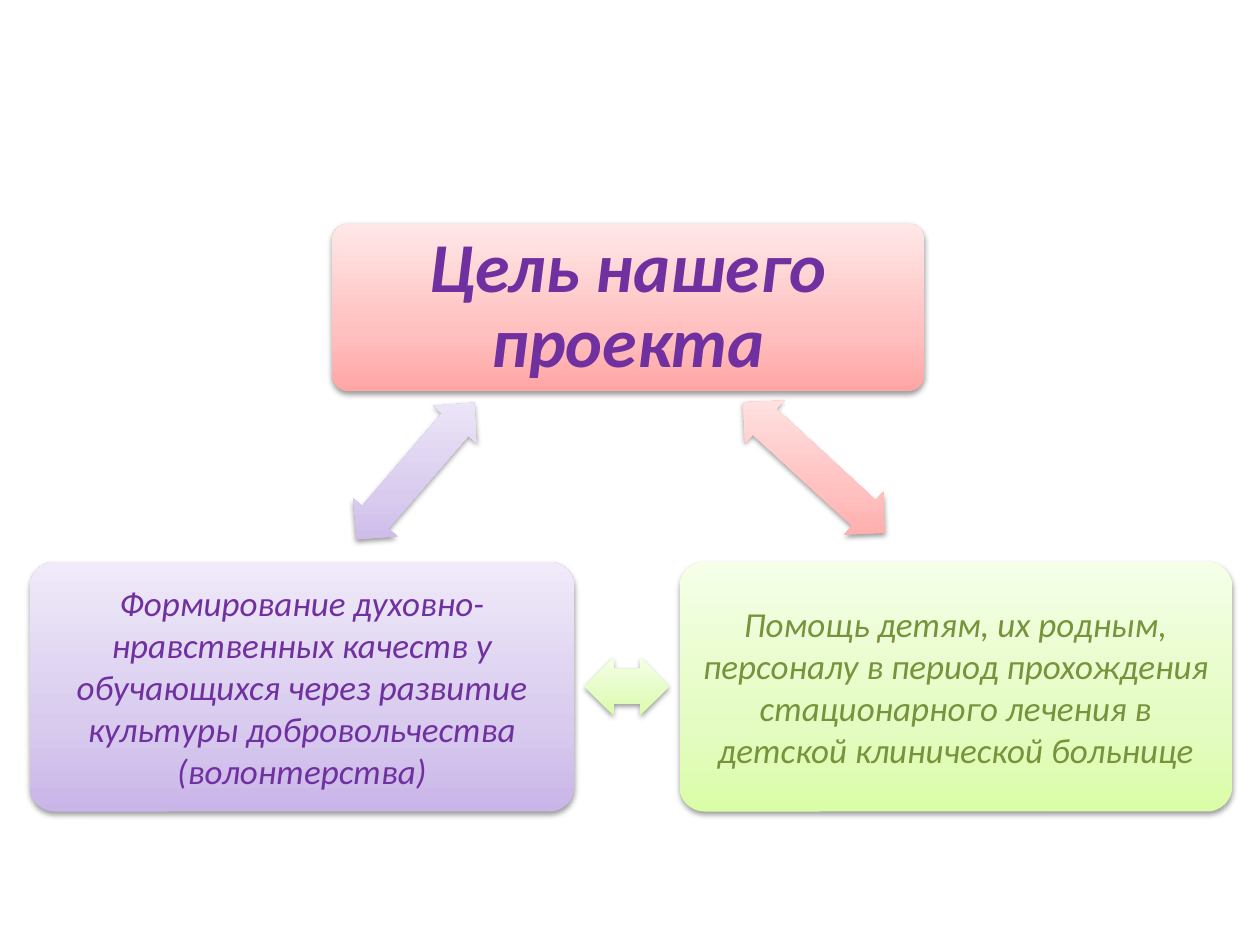
"""Build a slide that links the project goal to its two parts."""
from dataclasses import dataclass

from lxml import etree
from pptx import Presentation
from pptx.dml.color import RGBColor
from pptx.enum.shapes import MSO_SHAPE as Preset
from pptx.enum.text import MSO_ANCHOR as Anchor, MSO_AUTO_SIZE as AutoSize, PP_ALIGN as Align
from pptx.oxml import parse_xml
from pptx.oxml.ns import nsdecls, qn
from pptx.shapes.base import BaseShape
from pptx.slide import Slide
from pptx.util import Pt

RED = ("FFA6A5", "FFC0BF", "FFE7E7")
GREEN = ("DAFDA7", "E4FCC2", "F5FFE7")
PURPLE = ("C9B5E8", "D8CBEE", "F0EAF9")
STOPS = (0, 35, 100)


@dataclass(frozen=True)
class Panel:
    left: float
    top: float
    width: float
    height: float
    shades: tuple[str, str, str]
    text: str
    color: str


@dataclass(frozen=True)
class Arrow:
    left: float
    top: float
    width: float
    rotation: float
    shades: tuple[str, str, str]


GOAL = Panel(189.7, 127.8, 338.6, 95.8, RED, "Цель нашего проекта", "7030A0")
PARTS = (
    Panel(388.4, 321.1, 315.6, 142.6, GREEN,
          "Помощь детям, их родным, персоналу в период прохождения "
          "стационарного лечения в детской клинической больнице", "77933C"),
    Panel(17, 321.1, 311.2, 142.6, PURPLE,
          "Формирование духовно-нравственных качеств у обучающихся через "
          "развитие культуры добровольчества (волонтерства)", "7030A0"),
)
ARROWS = (
    Arrow(410.2, 250.6, 110.2, 42.6, RED),
    Arrow(334.1, 375.6, 48.2, 180, GREEN),
    Arrow(185.8, 252.6, 103, 310.7, PURPLE),
)
ARROW_HEIGHT = 33.1


def rgb(value: str) -> RGBColor:
    """Turn a hex string into a colour."""
    return RGBColor.from_string(value)


def apply(target: object, formats: dict) -> None:
    """Set each attribute of the target from the formats."""
    for name, value in formats.items():
        setattr(target, name, value)


def style(shape: BaseShape, shades: tuple[str, str, str]) -> None:
    """Give a shape an upward gradient, no line and a soft shadow."""
    shape.line.fill.background()
    properties = shape._element.spPr
    stops = "".join(
        f'<a:gs pos="{stop * 1000}"><a:srgbClr val="{shade}"/></a:gs>'
        for stop, shade in zip(STOPS, shades)
    )
    gradient = parse_xml(
        f'<a:gradFill {nsdecls("a")} rotWithShape="0"><a:gsLst>{stops}</a:gsLst>'
        '<a:lin ang="16200000" scaled="0"/></a:gradFill>'
    )
    properties.find(qn("a:prstGeom")).addnext(gradient)
    effects = etree.SubElement(properties, qn("a:effectLst"))
    shadow = etree.SubElement(
        effects, qn("a:outerShdw"), blurRad=str(Pt(3.1)), dist=str(Pt(1.6)),
        dir="5400000", rotWithShape="0",
    )
    color = etree.SubElement(shadow, qn("a:srgbClr"), val="000000")
    etree.SubElement(color, qn("a:alpha"), val="38000")


def write(shape: BaseShape, panel: Panel, size: float, inset: float,
          spacing: float, bold: bool) -> None:
    """Write centred italic text into a shape."""
    frame = shape.text_frame
    frame.text = panel.text
    margins = {f"margin_{side}": Pt(inset) for side in ("left", "top", "right", "bottom")}
    apply(frame, {"word_wrap": True, "auto_size": AutoSize.NONE,
                  "vertical_anchor": Anchor.MIDDLE, **margins})
    paragraph = frame.paragraphs[0]
    apply(paragraph, {"alignment": Align.CENTER, "line_spacing": spacing,
                      "space_before": Pt(0)})
    font = paragraph.runs[0].font
    apply(font, {"name": "Calibri", "size": Pt(size), "bold": bold, "italic": True})
    font.color.rgb = rgb(panel.color)


def add_panel(slide: Slide, panel: Panel) -> BaseShape:
    """Add a rounded panel without text."""
    shape = slide.shapes.add_shape(
        Preset.ROUNDED_RECTANGLE, Pt(panel.left), Pt(panel.top),
        Pt(panel.width), Pt(panel.height),
    )
    shape.adjustments[0] = 0.1
    style(shape, panel.shades)
    return shape


def add_arrow(slide: Slide, arrow: Arrow) -> None:
    """Add a turned double arrow."""
    shape = slide.shapes.add_shape(
        Preset.LEFT_RIGHT_ARROW, Pt(arrow.left), Pt(arrow.top),
        Pt(arrow.width), Pt(ARROW_HEIGHT),
    )
    shape.adjustments[0], shape.adjustments[1] = 0.6, 0.5
    shape.rotation = arrow.rotation
    style(shape, arrow.shades)


def add_goal(slide: Slide) -> None:
    """Add the goal panel with the slide title on top of it."""
    panel = add_panel(slide, GOAL)
    title = slide.shapes.title
    apply(title, {"left": Pt(GOAL.left), "top": Pt(GOAL.top),
                  "width": Pt(GOAL.width), "height": Pt(GOAL.height)})
    write(title, GOAL, size=40, inset=14.4, spacing=0.9, bold=True)
    panel._element.addnext(title._element)


def main() -> None:
    """Build and save the presentation."""
    presentation = Presentation()
    apply(presentation, {"slide_width": Pt(720), "slide_height": Pt(540)})
    slide = presentation.slides.add_slide(presentation.slide_layouts[5])
    add_goal(slide)
    for part in PARTS:
        write(add_panel(slide, part), part, size=20, inset=5.7, spacing=1, bold=False)
    for arrow in ARROWS:
        add_arrow(slide, arrow)
    presentation.save("out.pptx")


if __name__ == "__main__":
    main()
